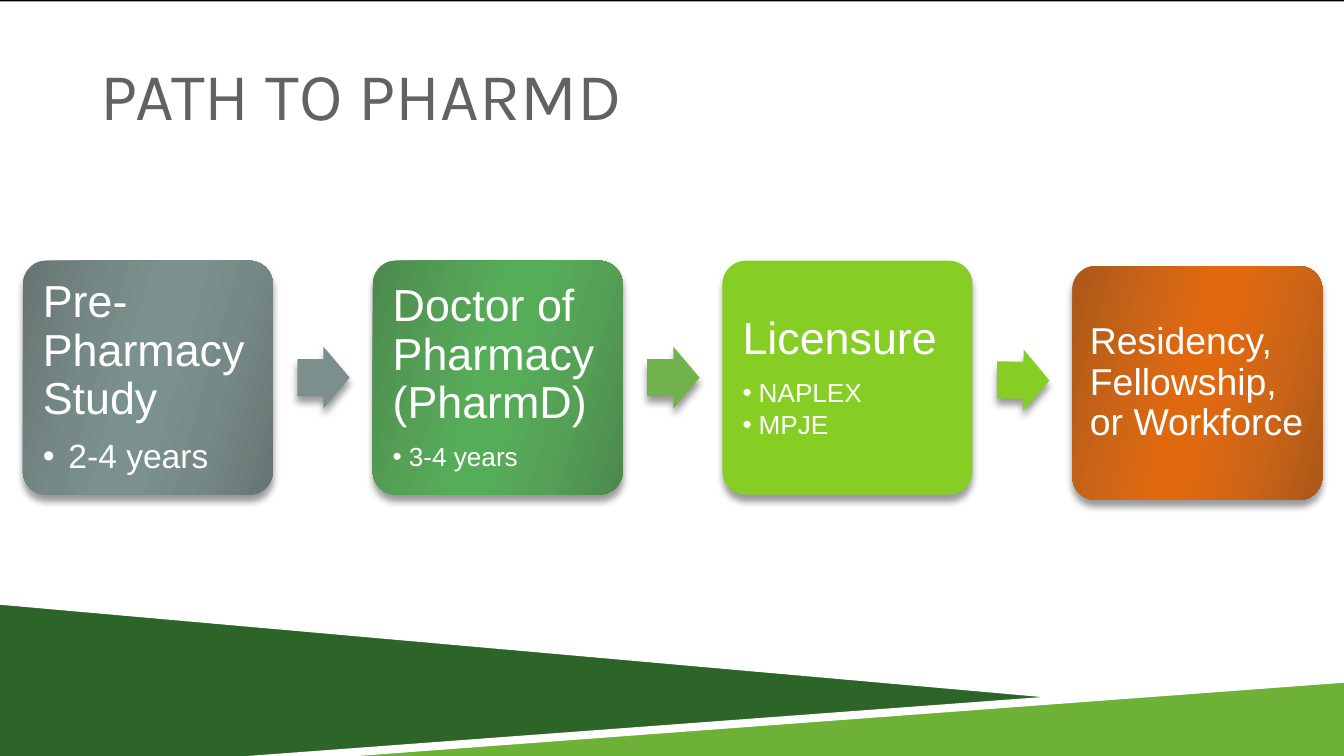
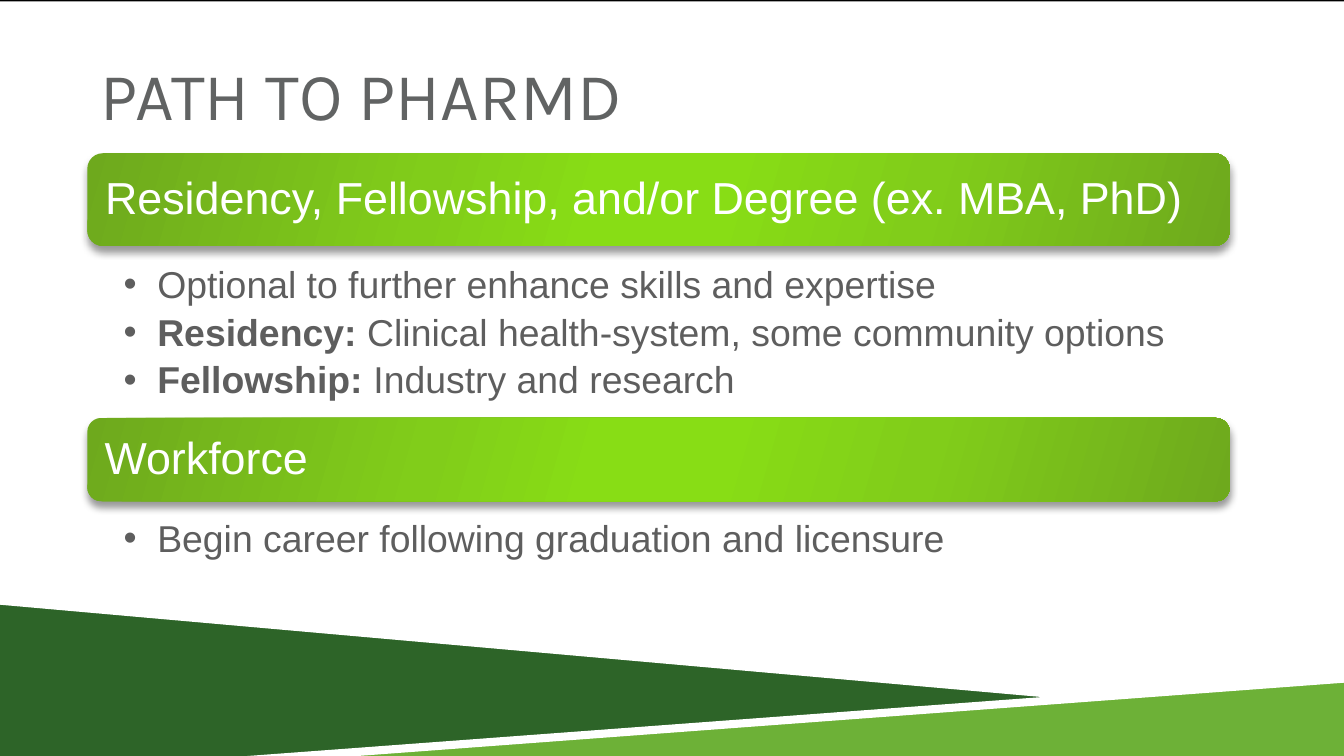
from dataclasses import dataclass

from lxml import etree
from pptx import Presentation
from pptx.dml.color import RGBColor
from pptx.enum.shapes import MSO_SHAPE
from pptx.enum.text import MSO_ANCHOR, MSO_AUTO_SIZE, PP_ALIGN
from pptx.oxml.ns import qn
from pptx.util import Inches, Pt

ROUNDED = MSO_SHAPE.ROUNDED_RECTANGLE
ARROW = MSO_SHAPE.RIGHT_ARROW
RECTANGLE = MSO_SHAPE.RECTANGLE
MIDDLE = MSO_ANCHOR.MIDDLE
TOP = MSO_ANCHOR.TOP
LEFT = PP_ALIGN.LEFT
NO_FIT = MSO_AUTO_SIZE.NONE

COLUMNS, ROWS = 100, 56.25
CELL = Inches(0.1)
STEP_PITCH = 26.03
TITLE_ONLY, TWO_CONTENT = 5, 3
TITLE_TEXT = "PATH TO PHARMD"


@dataclass(frozen=True)
class Theme:
    font: str = "Arial"
    title_font: str = "Karla"
    title_size: int = 36
    heading_size: int = 24
    body_size: int = 20
    detail_size: int = 18
    small_size: int = 14
    title: str = "616363"
    body: str = "5E5E5E"
    white: str = "FFFFFF"
    black: str = "000000"
    dark_green: str = "2D6428"
    leaf_green: str = "6DB137"
    lime: str = "86CE24"
    slate_arrow: str = "7D8F8C"
    green_arrow: str = "72B24C"
    slate: tuple = ("667573", "778986", "7B918D")
    green: tuple = ("4C884D", "55A257", "56AD58")
    orange: tuple = ("AA581A", "CF6516", "E06910")
    bar: tuple = ("6EA91D", "81CD1A", "88DD15")


THEME = Theme()
BULLET_INDENTS = {THEME.small_size: 1.2, THEME.detail_size: 1.9, THEME.body_size: 2.5}


def cells(count):
    return round(count * CELL)


def color(value):
    return RGBColor.from_string(value)


def place(shape, left, top, width, height):
    shape.left, shape.top = cells(left), cells(top)
    shape.width, shape.height = cells(width), cells(height)


def add_color_node(parent, value):
    return etree.SubElement(parent, qn("a:srgbClr"), val=value)


def paint(shape, fill):
    shape.shadow.inherit = False
    shape.line.fill.background()
    if isinstance(fill, str):
        shape.fill.solid()
        shape.fill.fore_color.rgb = color(fill)
        return
    shape.fill.gradient()
    shape.fill.gradient_angle = 344
    stops = shape.element.spPr.find(qn("a:gradFill")).find(qn("a:gsLst"))
    for stop in list(stops):
        stops.remove(stop)
    for position, value in zip((0, 30, 45, 55, 73, 100), fill + fill[::-1]):
        stop = etree.SubElement(stops, qn("a:gs"), pos=str(position * 1000))
        add_color_node(stop, value)


def add_shadow(shape):
    effects = shape.element.spPr.find(qn("a:effectLst"))
    shadow = etree.SubElement(
        effects, qn("a:outerShdw"), blurRad=str(Pt(4)), dist=str(Pt(3.3)),
        dir="5400000", rotWithShape="0")
    etree.SubElement(add_color_node(shadow, THEME.black), qn("a:alpha"), val="40000")


def add_block(slide, kind, box, fill, adjustments=()):
    shape = slide.shapes.add_shape(kind, *(cells(length) for length in box))
    for index, value in enumerate(adjustments):
        shape.adjustments[index] = value
    paint(shape, fill)
    add_shadow(shape)
    return shape


def add_wedge(slide, points, fill):
    start, *others = [(cells(x), cells(y)) for x, y in points]
    builder = slide.shapes.build_freeform(*start)
    builder.add_line_segments(others, close=True)
    shape = builder.convert_to_shape()
    paint(shape, fill)
    return shape


def prepare_frame(shape, anchor, horizontal, vertical, right=None):
    frame = shape.text_frame
    frame.word_wrap = True
    frame.auto_size = NO_FIT
    frame.vertical_anchor = anchor
    frame.margin_left = cells(horizontal)
    frame.margin_right = cells(horizontal if right is None else right)
    frame.margin_top = frame.margin_bottom = cells(vertical)
    return frame


def set_bullet(paragraph, size):
    indent = cells(BULLET_INDENTS[size])
    paragraph.level = 1
    properties = paragraph._p.get_or_add_pPr()
    properties.set("marL", str(indent))
    properties.set("indent", str(-indent))
    etree.SubElement(properties, qn("a:buFont"), typeface=THEME.font)
    etree.SubElement(properties, qn("a:buChar"), char="•")


def write_paragraph(paragraph, runs, size, text_color, gap, bullet=False):
    if bullet:
        set_bullet(paragraph, size)
    paragraph.alignment = LEFT
    paragraph.line_spacing = 0.9
    paragraph.space_before = Pt(0)
    paragraph.space_after = Pt(round(size * gap, 1))
    for text, bold in runs:
        run = paragraph.add_run()
        run.text = text
        run.font.name = THEME.font
        run.font.size = Pt(size)
        run.font.bold = bold
        run.font.color.rgb = color(text_color)


def write_heading(shape, text, size=THEME.heading_size, margin=1):
    frame = prepare_frame(shape, MIDDLE, margin, margin)
    write_paragraph(frame.paragraphs[0], [(text, False)], size, THEME.white, 0.35)
    return frame


def add_title(slide):
    title = slide.shapes.title
    place(title, 7.5, 2.3, 85, 9.4)
    paragraph = prepare_frame(title, MIDDLE, 0, 0.5).paragraphs[0]
    paragraph.alignment = LEFT
    run = paragraph.add_run()
    run.text = TITLE_TEXT
    run.font.name = THEME.title_font
    run.font.size = Pt(THEME.title_size)
    run.font.color.rgb = color(THEME.title)


def add_master_bands(presentation, slide):
    master = presentation.slide_master
    master.background.fill.solid()
    master.background.fill.fore_color.rgb = color(THEME.black)
    panel = slide.shapes.add_shape(RECTANGLE, 0, cells(0.1), cells(COLUMNS), cells(ROWS - 0.1))
    paint(panel, THEME.white)
    wedges = [
        ([(0, 44.8), (79.2, 51.9), (20, ROWS), (0, ROWS)], THEME.dark_green),
        ([(19.8, ROWS), (COLUMNS, 50.4), (COLUMNS, ROWS)], THEME.leaf_green),
        ([(0, 44.4), (0, 45), (79, 52), (83.2, 51.7)], THEME.white),
        ([(COLUMNS, 50.2), (18.4, ROWS), (26.6, ROWS), (COLUMNS, 50.8)], THEME.white),
    ]
    bands = [panel] + [add_wedge(slide, points, fill) for points, fill in wedges]
    for index, band in enumerate(bands):
        band.element.nvSpPr.cNvPr.set("id", str(100 + index))
        master.shapes.element.insert(2 + index, band.element)


def add_step(slide, index, drop, fill, heading, size, margin, details, detail_size):
    box = (1.7 + STEP_PITCH * index, 19.4 + drop, 18.6, 17.4)
    card = add_block(slide, ROUNDED, box, fill, [0.1])
    frame = write_heading(card, heading, size, margin)
    for detail in details:
        write_paragraph(frame.add_paragraph(), [(detail, False)], detail_size,
                        THEME.white, 0.15, bullet=True)


def add_step_arrow(slide, index, fill, drop, rotation):
    box = (22.12 + STEP_PITCH * index, 25.8 + drop, 3.9, 4.6)
    arrow = add_block(slide, ARROW, box, fill, [0.6, 0.5])
    arrow.rotation = rotation


def add_bar(slide, top, height, text):
    write_heading(add_block(slide, ROUNDED, (6.5, top, 85, height), THEME.bar), text)


def fill_list(placeholder, top, height, items):
    place(placeholder, 6.5, top, 85, height)
    frame = prepare_frame(placeholder, TOP, 2.7, 0.3, right=1.6)
    for index, runs in enumerate(items):
        paragraph = frame.add_paragraph() if index else frame.paragraphs[0]
        write_paragraph(paragraph, runs, THEME.body_size, THEME.body, 0.2, bullet=True)


def build_steps(slide):
    add_title(slide)
    large, body = THEME.heading_size, THEME.body_size
    detail, small = THEME.detail_size, THEME.small_size
    steps = [
        (0, THEME.slate, "Pre-Pharmacy Study", large, 1, ["2-4 years"], detail),
        (0, THEME.green, "Doctor of Pharmacy (PharmD)", large, 1, ["3-4 years"], small),
        (0, THEME.lime, "Licensure", large, 1, ["NAPLEX", "MPJE"], small),
        (0.4, THEME.orange, "Residency, Fellowship, or Workforce", body, 0.8, [], small),
    ]
    arrows = [(THEME.slate_arrow, 0, 0), (THEME.green_arrow, 0, 0), (THEME.lime, 0.2, 0.8)]
    for index, step in enumerate(steps):
        add_step(slide, index, *step)
    for index, arrow in enumerate(arrows):
        add_step_arrow(slide, index, *arrow)


def build_outcomes(slide):
    add_title(slide)
    add_bar(slide, 11.4, 6.9, "Residency, Fellowship, and/or Degree (ex. MBA, PhD)")
    fill_list(slide.placeholders[1], 19.5, 11.8, [
        [("Optional to further enhance skills and expertise", False)],
        [("Residency: ", True), ("Clinical health-system, some community options", False)],
        [("Fellowship: ", True), ("Industry and research", False)],
    ])
    add_bar(slide, 31.1, 6.2, "Workforce")
    fill_list(slide.placeholders[2], 38.4, 8, [
        [("Begin career following graduation and licensure", False)],
    ])


def main():
    presentation = Presentation()
    presentation.slide_width, presentation.slide_height = cells(COLUMNS), cells(ROWS)
    layouts = presentation.slide_layouts
    steps = presentation.slides.add_slide(layouts[TITLE_ONLY])
    add_master_bands(presentation, steps)
    build_steps(steps)
    build_outcomes(presentation.slides.add_slide(layouts[TWO_CONTENT]))
    presentation.save("out.pptx")


if __name__ == "__main__":
    main()
